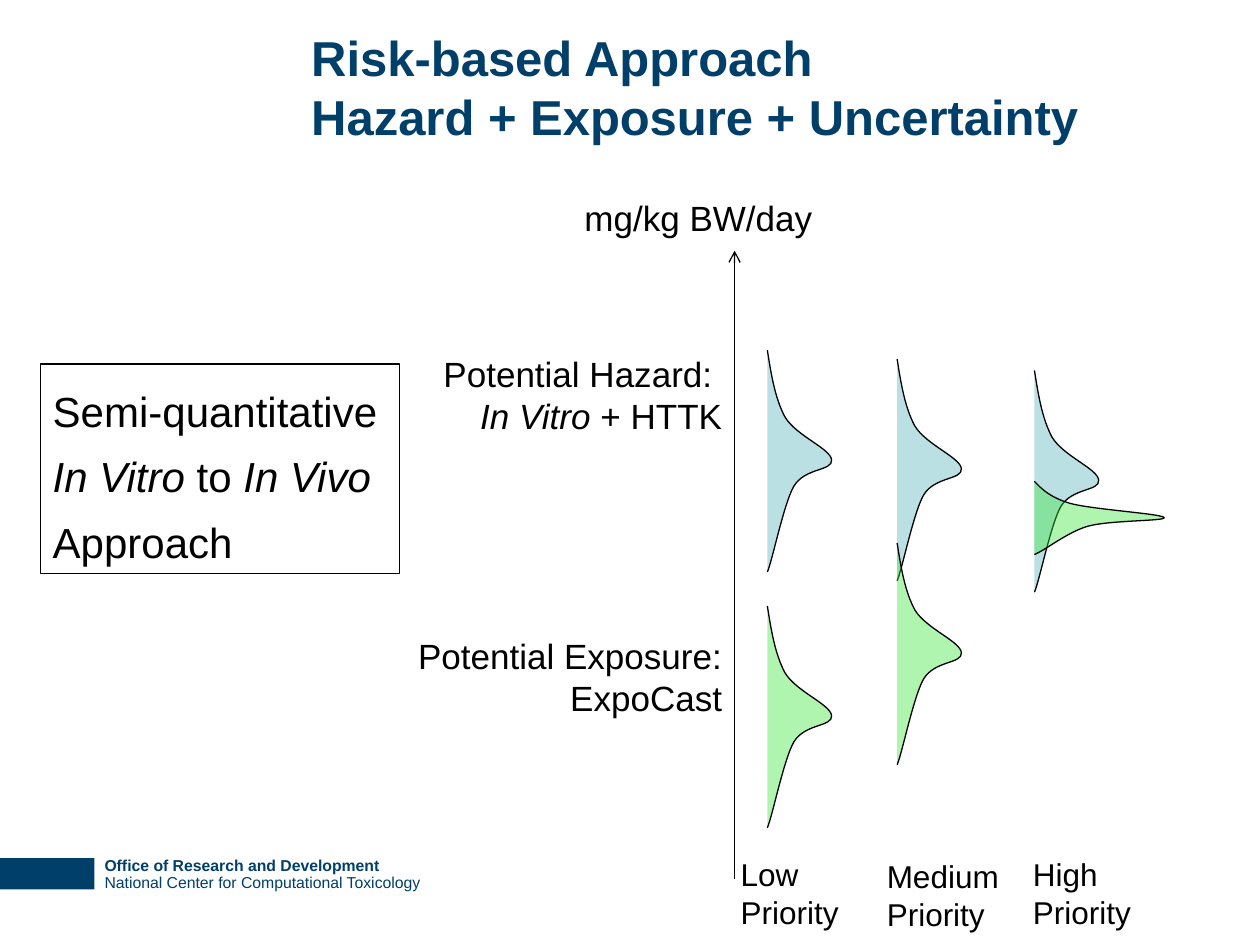
from lxml.etree import SubElement
from pptx import Presentation
from pptx.dml.color import RGBColor
from pptx.enum.shapes import MSO_CONNECTOR, MSO_SHAPE
from pptx.enum.text import MSO_ANCHOR, MSO_AUTO_SIZE, PP_ALIGN
from pptx.oxml.ns import qn
from pptx.util import Inches, Pt

HUES = {"navy": "003F69", "black": "000000", "blue": "BBE0E3", "green": "39E739"}
BELL = [(0.03, 0.19), (0.06, 0.38), (0.14, 0.53), (0.23, 0.68),
        (0.5, 0.78), (0.51, 0.87), (0.52, 0.96), (0.3, 0.93), (0.21, 1.08),
        (0.13, 1.22), (0.04, 1.67), (0, 1.76)]
CURVES = [
    (6.09, 2.78, "blue"), (6.09, 4.81, "green"),
    (7.12, 2.85, "blue"), (7.12, 4.31, "green"),
    (8.21, 2.94, "blue"), (8.21, 3.82, "green", 2.02, 0.33),
]
LABELS = [
    (3.15, 4.99, 2.68, 0.77, ["Potential Exposure:", " ExpoCast"], 20, PP_ALIGN.RIGHT),
    (3.25, 2.75, 2.58, 0.77, ["Potential Hazard: ", "*In Vitro *+ HTTK"], 20, PP_ALIGN.RIGHT),
    (5.78, 6.74, 1.27, 0.71, ["Low", "Priority"], 18, PP_ALIGN.LEFT),
    (6.94, 6.75, 1.17, 0.71, ["Medium", "Priority"], 18, PP_ALIGN.LEFT),
    (8.1, 6.74, 1.37, 0.71, ["High", "Priority"], 18, PP_ALIGN.LEFT),
]


def tint(name):
    return RGBColor.from_string(HUES[name])


def apply(obj, style):
    for key, value in style.items():
        setattr(obj, key, value)


def write(frame, lines, size, hue="black", align=PP_ALIGN.LEFT, space=None, mark="italic"):
    for index, line in enumerate(lines):
        para = frame.add_paragraph() if index else frame.paragraphs[0]
        apply(para, {"alignment": align, "line_spacing": space})
        for turn, part in enumerate(line.split("*")):
            if part:
                run = para.add_run()
                run.text = part
                apply(run.font, {"size": Pt(size), "name": "Arial", mark: turn % 2 == 1})
                run.font.color.rgb = tint(hue)


def add_text(slide, x, y, w, h, lines, size, align=PP_ALIGN.LEFT, wrap=True):
    box = slide.shapes.add_textbox(Inches(x), Inches(y), Inches(w), Inches(h))
    apply(box.text_frame, {"word_wrap": wrap, "auto_size": MSO_AUTO_SIZE.SHAPE_TO_FIT_TEXT})
    write(box.text_frame, lines, size, align=align)


def trim(shape, fill=None, line=None):
    shape.shadow.inherit = False
    if fill:
        shape.fill.solid()
        shape.fill.fore_color.rgb = tint(fill)
    else:
        shape.fill.background()
    if line:
        shape.line.color.rgb = tint(line)
        shape.line.width = Pt(0.75)
    else:
        shape.line.fill.background()


def add_rect(slide, x, y, w, h, fill=None, line=None):
    rect = slide.shapes.add_shape(
        MSO_SHAPE.RECTANGLE, Inches(x), Inches(y), Inches(w), Inches(h))
    trim(rect, fill, line)
    return rect


def bend(shape):
    route = next(shape._element.iter(qn("a:path")))
    legs = route.findall(qn("a:lnTo"))
    for start in range(0, len(legs), 3):
        curve = SubElement(route, qn("a:cubicBezTo"))
        for leg in legs[start:start + 3]:
            curve.append(leg[0])
            route.remove(leg)


def add_curve(slide, x, y, hue, wide=1, tall=1):
    spots = [(Inches(x + a * wide), Inches(y + b * tall)) for a, b in BELL]
    pen = slide.shapes.build_freeform(Inches(x), Inches(y))
    pen.add_line_segments(spots, close=False)
    bell = pen.convert_to_shape()
    bend(bell)
    trim(bell, hue, "black")
    if hue == "green":
        color = bell._element.spPr.find(qn("a:solidFill"))[0]
        SubElement(color, qn("a:alpha"), val="40000")


def add_axis(slide, x, low, top):
    axis = slide.shapes.add_connector(
        MSO_CONNECTOR.STRAIGHT, Inches(x), Inches(low), Inches(x), Inches(top))
    axis.line.color.rgb = tint("black")
    axis.line.width = Pt(0.75)
    SubElement(axis._element.spPr.find(qn("a:ln")), qn("a:tailEnd"), type="arrow")
    SubElement(axis._element.spPr, qn("a:effectLst"))


def add_title(slide):
    title = slide.shapes.title
    apply(title, {"left": Inches(2.37), "top": Inches(0.47),
                  "width": Inches(7.44), "height": Inches(0.43)})
    frame = title.text_frame
    apply(frame, {"vertical_anchor": MSO_ANCHOR.MIDDLE, "word_wrap": True})
    frame.text = "Risk-based Approach\vHazard + Exposure + Uncertainty"
    para = frame.paragraphs[0]
    para.alignment = PP_ALIGN.LEFT
    for run in para.runs:
        apply(run.font, {"size": Pt(28), "name": "Arial", "bold": True})
        run.font.color.rgb = tint("navy")


def add_footer(slide):
    add_rect(slide, -0.12, 6.81, 0.87, 0.25, "navy")
    box = slide.shapes.add_textbox(Inches(0.83), Inches(6.81), Inches(6.17), Inches(0.27))
    apply(box.text_frame, {
        "margin_left": 0, "margin_right": 0, "margin_top": 0, "margin_bottom": 0,
        "vertical_anchor": MSO_ANCHOR.BOTTOM, "word_wrap": True,
        "auto_size": MSO_AUTO_SIZE.SHAPE_TO_FIT_TEXT})
    lines = ["*Office of Research and Development*",
             "National Center for Computational Toxicology"]
    write(box.text_frame, lines, 9, "navy", PP_ALIGN.JUSTIFY, 0.9, "bold")


def add_note(slide):
    note = add_rect(slide, 0.32, 2.89, 2.85, 1.66, line="black")
    apply(note.text_frame, {"vertical_anchor": MSO_ANCHOR.TOP, "word_wrap": True,
                            "auto_size": MSO_AUTO_SIZE.SHAPE_TO_FIT_TEXT})
    lines = ["Semi-quantitative", "*In Vitro *to *In Vivo*", "Approach"]
    write(note.text_frame, lines, 24, space=1.3)


def main():
    deck = Presentation()
    apply(deck, {"slide_width": Inches(10), "slide_height": Inches(7.5)})
    slide = deck.slides.add_slide(deck.slide_layouts[5])
    add_title(slide)
    add_footer(slide)
    add_axis(slide, 5.83, 6.98, 1.99)
    add_text(slide, 4.54, 1.51, 2.03, 0.44, ["mg/kg BW/day"], 20, wrap=False)
    for curve in CURVES:
        add_curve(slide, *curve)
    for label in LABELS:
        add_text(slide, *label)
    add_note(slide)
    deck.save("out.pptx")


if __name__ == "__main__":
    main()
